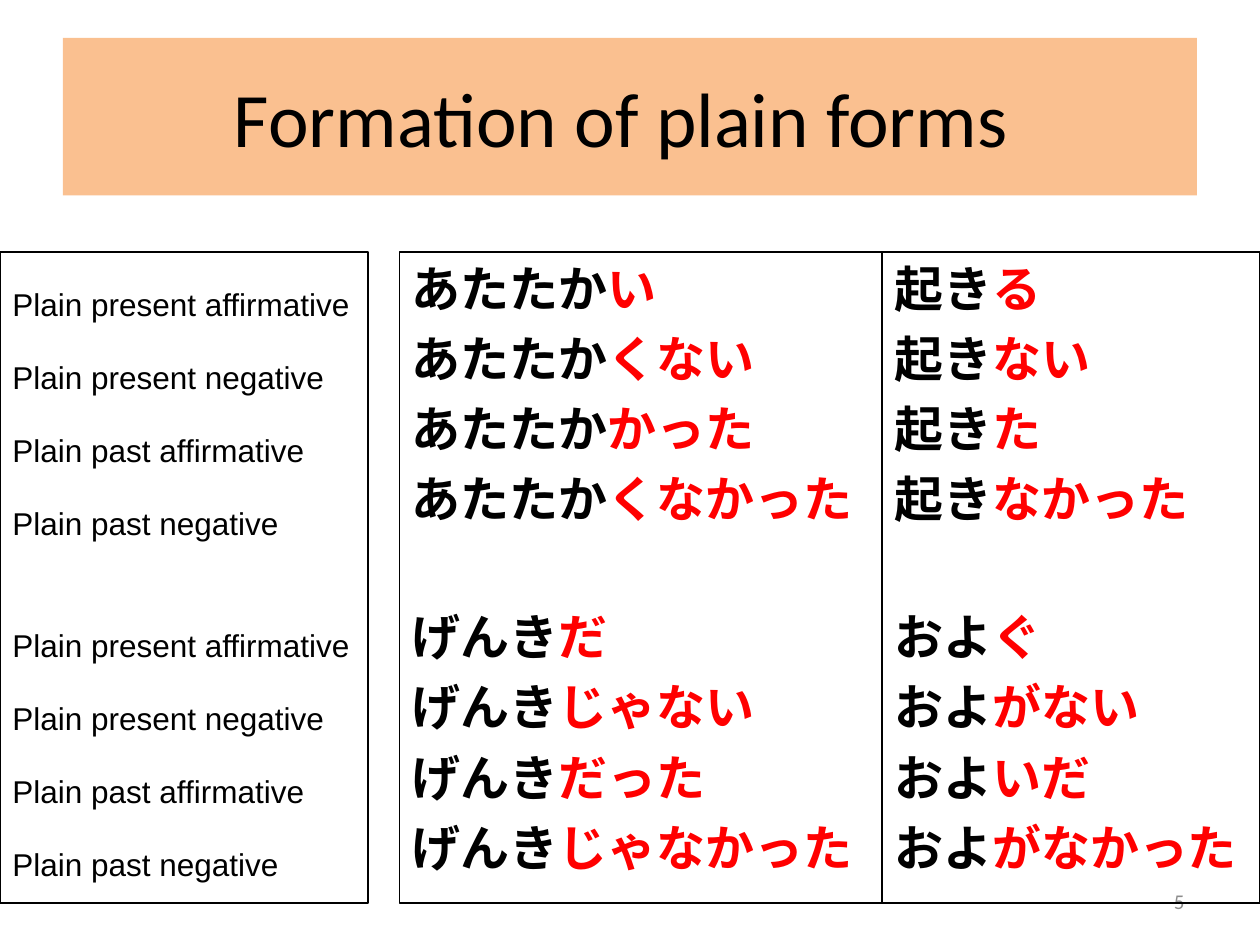
from dataclasses import dataclass

from pptx import Presentation
from pptx import util as u
from pptx.dml.color import RGBColor
from pptx.enum import shapes, text
from pptx.oxml.xmlchemy import OxmlElement


@dataclass(frozen=True)
class Theme:
    ink: str = "000000"
    ending: str = "FF0000"
    banner: str = "FAC090"
    muted: str = "8C8C8C"
    head_font: str = "Calibri"
    label_font: str = "Arial"
    kana_font: str = "Roboto"
    title_size: int = 44
    kana_size: int = 28
    label_size: int = 18
    number_size: int = 12


THEME = Theme()

# Two groups per column; each form is a (stem, ending) pair
LABELS = ["Plain present affirmative", "Plain present negative",
          "Plain past affirmative", "Plain past negative"]
ADJECTIVES = [("あたたか", ["い", "くない", "かった", "くなかった"]),
              ("げんき", ["だ", "じゃない", "だった", "じゃなかった"])]
VERBS = [("起き", ["る", "ない", "た", "なかった"]),
         ("およ", ["ぐ", "がない", "いだ", "がなかった"])]


def add_run(p, words, font, size, color, bold=False):
    r = p.add_run()
    r.text = words
    r.font.size = u.Pt(size)
    r.font.bold = bold
    r.font.color.rgb = RGBColor.from_string(color)
    r.font.name = font
    east_asian = OxmlElement("a:ea")
    east_asian.set("typeface", font)
    r.font._element.append(east_asian)


def add_box(s, box, fill=None, line=None, anchor=text.MSO_ANCHOR.TOP):
    sp = s.shapes.add_shape(shapes.MSO_SHAPE.RECTANGLE, *map(u.Inches, box))
    sp.shadow.inherit = False
    if fill:
        sp.fill.solid()
        sp.fill.fore_color.rgb = RGBColor.from_string(fill)
    else:
        sp.fill.background()
    if line:
        sp.line.color.rgb = RGBColor.from_string(line)
        sp.line.width = u.Pt(1)
    else:
        sp.line.fill.background()
    tf = sp.text_frame
    tf.word_wrap = True
    tf.vertical_anchor = anchor
    return tf


def add_lines(tf, groups, gap, group_gap, write, spacing=1.0):
    """Write the groups as paragraphs, with a wider gap before each new group."""
    p = tf.paragraphs[0]
    for g, group in enumerate(groups):
        for i, item in enumerate(group):
            if g or i:
                p = tf.add_paragraph()
                p.space_before = u.Pt(gap if i else group_gap)
            p.alignment = text.PP_ALIGN.LEFT
            p.line_spacing = spacing
            write(p, item)


def add_title(s, box):
    tf = add_box(s, box, fill=THEME.banner, anchor=text.MSO_ANCHOR.MIDDLE)
    p = tf.paragraphs[0]
    p.alignment = text.PP_ALIGN.CENTER
    add_run(p, "Formation of plain forms ", THEME.head_font,
            THEME.title_size, THEME.ink)


def add_labels(s, box):
    def write(p, label):
        add_run(p, label, THEME.label_font, THEME.label_size, THEME.ink)

    tf = add_box(s, box, line=THEME.ink)
    add_lines(tf, [LABELS, LABELS], 5, 33.4, write, spacing=1.7)


def add_forms(s, box, words):
    def write(p, form):
        for part, color in zip(form, (THEME.ink, THEME.ending)):
            add_run(p, part, THEME.kana_font, THEME.kana_size, color, bold=True)

    groups = [[(stem, ending) for ending in endings] for stem, endings in words]
    add_lines(add_box(s, box, line=THEME.ink), groups, 6.4, 45.6, write)


def add_slide_number(s, box):
    tf = s.shapes.add_textbox(*map(u.Inches, box)).text_frame
    tf.word_wrap = True
    tf.vertical_anchor = text.MSO_ANCHOR.MIDDLE
    p = tf.paragraphs[0]
    p.alignment = text.PP_ALIGN.RIGHT
    add_run(p, "5", THEME.head_font, THEME.number_size, THEME.muted)


def main():
    prs = Presentation()
    prs.slide_width, prs.slide_height = u.Inches(10), u.Inches(7.5)
    s = prs.slides.add_slide(prs.slide_layouts[6])
    top, height = 2, 5.17

    add_slide_number(s, (7.17, 6.95, 2.33, 0.4))
    # Columns: names of the forms, adjectives, verbs
    add_labels(s, (0, top, 2.92, height))
    add_forms(s, (3.17, top, 3.83, height), ADJECTIVES)
    add_forms(s, (7, top, 3, height), VERBS)
    add_title(s, (0.5, 0.3, 9, 1.25))
    prs.save("out.pptx")


if __name__ == "__main__":
    main()
